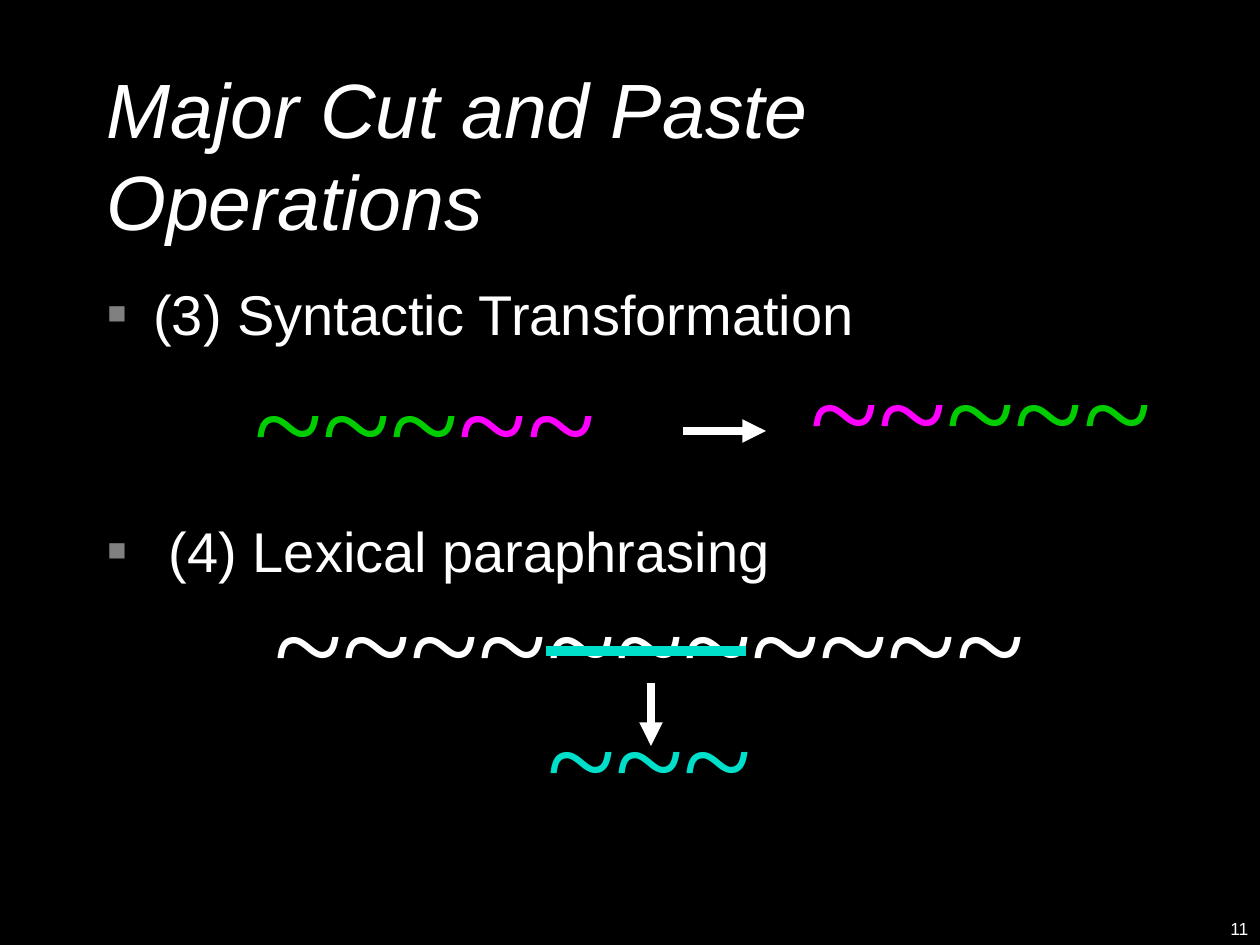
from dataclasses import dataclass

from lxml import etree
from pptx import Presentation
from pptx.dml.color import RGBColor
from pptx.enum.shapes import MSO_CONNECTOR
from pptx.enum.text import MSO_ANCHOR
from pptx.oxml.ns import qn
from pptx.util import Emu, Pt

STRAIGHT = MSO_CONNECTOR.STRAIGHT
TOP = MSO_ANCHOR.TOP
MIDDLE = MSO_ANCHOR.MIDDLE
EMU_PER_PX = 914400 / 126


def px(length):
    return Emu(round(length * EMU_PER_PX))


@dataclass(frozen=True)
class Theme:
    background: str = "000000"
    white: str = "FFFFFF"
    grey: str = "808080"
    green: str = "00CC00"
    magenta: str = "FF00FF"
    cyan: str = "00DFCA"
    text_font: str = "Arial"
    wave_font: str = "Times New Roman"
    title_size: int = 44
    body_size: int = 32
    wave_size: int = 72
    number_size: int = 10
    arrow_width: float = 4.5
    strike_width: int = 6


class SlideBuilder:
    def __init__(self, page, theme):
        self.page = page
        self.theme = theme
        fill = page.background.fill
        fill.solid()
        fill.fore_color.rgb = RGBColor.from_string(theme.background)

    def frame(self, area, anchor=TOP, wrap=True):
        box = self.page.shapes.add_textbox(*map(px, area))
        settings = {"word_wrap": wrap, "vertical_anchor": anchor}
        for name, value in settings.items():
            setattr(box.text_frame, name, value)
        return box.text_frame

    def span(self, para, text, size, color, font, italic=False):
        span = para.add_run()
        span.text = text
        settings = {"size": Pt(size), "name": font, "italic": italic}
        for name, value in settings.items():
            setattr(span.font, name, value)
        span.font.color.rgb = RGBColor.from_string(color)

    def label(self, area, text, size, **style):
        wrap = style.pop("wrap", True)
        anchor = style.pop("anchor", TOP)
        para = self.frame(area, anchor, wrap).paragraphs[0]
        self.span(para, text, size, self.theme.white, self.theme.text_font, **style)

    def bullets(self, area, items, gap):
        frame = self.frame(area)
        for index, text in enumerate(items):
            para = frame.add_paragraph() if index else frame.paragraphs[0]
            para.space_before = Pt(gap if index else 6)
            self.bullet_mark(para)
            self.span(para, text, self.theme.body_size, self.theme.white,
                      self.theme.text_font)

    def bullet_mark(self, para):
        properties = para._p.get_or_add_pPr()
        properties.set("marL", str(px(47)))
        properties.set("indent", str(px(-47)))
        color = etree.SubElement(properties, qn("a:buClr"))
        etree.SubElement(color, qn("a:srgbClr"), val=self.theme.grey)
        etree.SubElement(properties, qn("a:buSzPct"), val="110000")
        etree.SubElement(properties, qn("a:buFont"), typeface=self.theme.text_font)
        etree.SubElement(properties, qn("a:buChar"), char="▪")

    def waves(self, area, parts, wrap=False):
        para = self.frame(area, wrap=wrap).paragraphs[0]
        for count, color in parts:
            self.span(para, "~" * count, self.theme.wave_size, color,
                      self.theme.wave_font)

    def line(self, start, end, color, width, arrow=False):
        line = self.page.shapes.add_connector(STRAIGHT, *map(px, start + end))
        line.line.color.rgb = RGBColor.from_string(color)
        line.line.width = Pt(width)
        if arrow:
            etree.SubElement(line.line._get_or_add_ln(), qn("a:tailEnd"), type="triangle")
        etree.SubElement(line._element.spPr, qn("a:effectLst"))


def main():
    theme = Theme()
    deck = Presentation()
    deck.slide_width, deck.slide_height = px(1260), px(945)
    slide = SlideBuilder(deck.slides.add_slide(deck.slide_layouts[6]), theme)

    slide.label((1218, 912, 52, 33), "11", theme.number_size, wrap=False)
    slide.label((94, 66, 1071, 176), "Major Cut and Paste Operations",
                theme.title_size, anchor=MIDDLE, italic=True)
    slide.bullets((94, 273, 1071, 567),
                  ["(3) Syntactic Transformation", " (4) Lexical paraphrasing"], gap=97)

    first, second = (3, theme.green), (2, theme.magenta)
    slide.waves((242, 336, 367, 164), [first, second])
    slide.waves((262, 557, 798, 164), [(11, theme.white)], wrap=True)
    slide.waves((798, 325, 367, 164), [second, first])
    slide.line((683, 431), (766, 431), theme.white, theme.arrow_width, arrow=True)
    slide.line((546, 651), (746, 651), theme.cyan, theme.strike_width)
    slide.waves((535, 672, 231, 164), [(3, theme.cyan)])
    slide.line((651, 683), (651, 746), theme.white, theme.arrow_width, arrow=True)

    deck.save("out.pptx")


if __name__ == "__main__":
    main()
